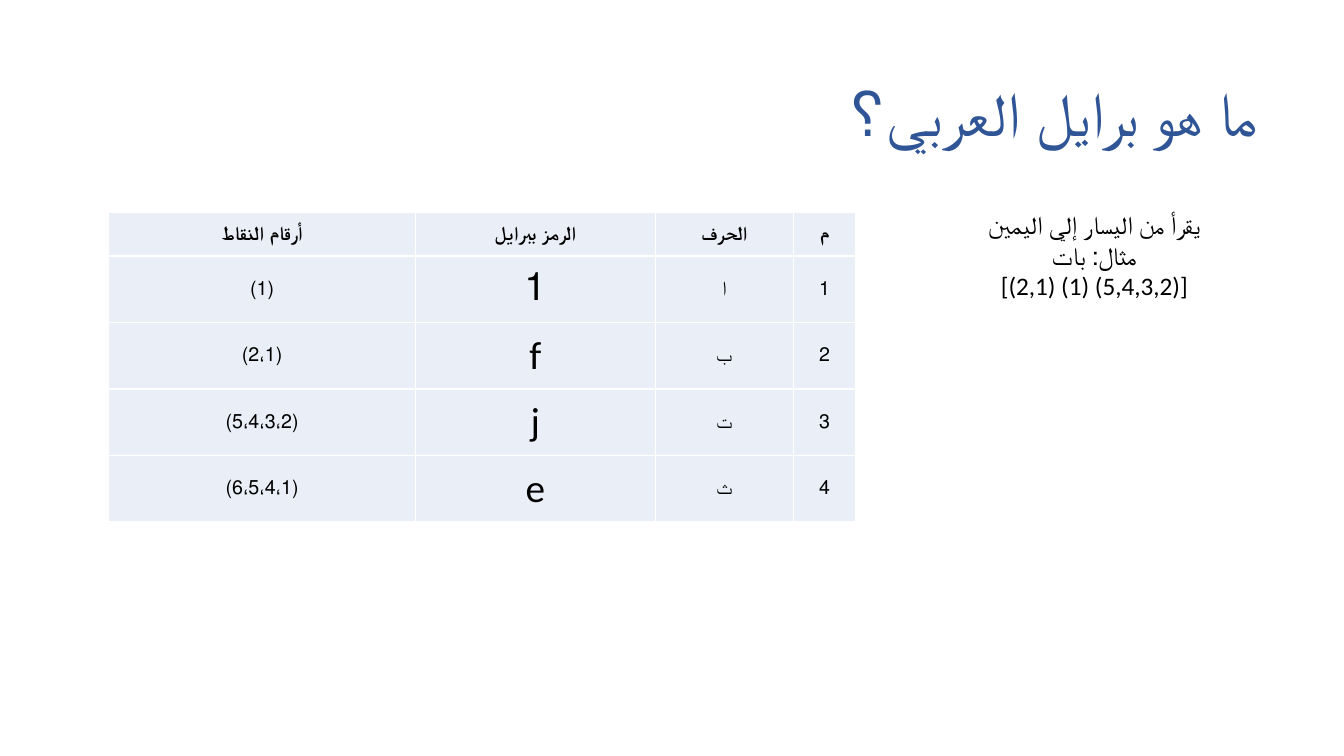
from lxml import etree
from pptx import Presentation
from pptx.dml.color import RGBColor
from pptx.enum import text
from pptx.oxml import ns
from pptx.util import Inches, Pt

FONT = "Calibri"
BLACK, BLUE, PALE, WHITE = "000000", "2F5597", "EAEFF7", "FFFFFF"

# Columns run from left to right as they show on the slide.
COLUMN_WIDTHS = [3.04, 2.38, 1.37, 0.62]
ROW_HEIGHTS = [0.43] + [0.66] * 4
BRAILLE_COLUMN = 1
BRAILLE_ROWS = [
    ["أرقام النقاط", "الرمز ببرايل", "الحرف", "م"],
    ["(1)", "1", "ا", "1"],
    ["(2،1)", "f", "ب", "2"],
    ["(5،4،3،2)", "j", "ت", "3"],
    ["(6،5،4،1)", "e", "ث", "4"],
]
EXAMPLE_LINES = [
    "يقرأ من اليسار إلي اليمين",
    "مثال: بات",
    "[(2,1) (1) (5,4,3,2)]",
]


def rgb(color):
    return RGBColor.from_string(color)


def format_paragraph(p, size, color, align, bold=False, rtl=False):
    p.alignment = align
    p.font.name = FONT
    p.font.size = Pt(size)
    p.font.bold = bold
    p.font.color.rgb = rgb(color)
    if rtl:
        p._p.get_or_add_pPr().set("rtl", "1")


def add_title(slide, title):
    sp = slide.shapes.title
    sp.left, sp.top = Inches(1.08), Inches(0.43)
    sp.width, sp.height = Inches(11.5), Inches(1.45)
    tf = sp.text_frame
    tf.text = title
    tf.vertical_anchor = text.MSO_ANCHOR.MIDDLE
    p = tf.paragraphs[0]
    p.line_spacing = 0.9
    format_paragraph(p, 44, BLUE, text.PP_ALIGN.RIGHT, rtl=True)


def add_borders(cell, color, width):
    tc_pr = cell._tc.get_or_add_tcPr()
    for side in "LRTB":
        ln = etree.SubElement(tc_pr, ns.qn("a:ln" + side), w=str(Pt(width)))
        fill = etree.SubElement(ln, ns.qn("a:solidFill"))
        etree.SubElement(fill, ns.qn("a:srgbClr"), val=color)


def fill_cell(cell, content, size, bold):
    cell.text = content
    cell.vertical_anchor = text.MSO_ANCHOR.MIDDLE
    cell.margin_left = cell.margin_right = Inches(0.07)
    cell.margin_top = cell.margin_bottom = 0
    add_borders(cell, WHITE, 1)
    cell.fill.solid()
    cell.fill.fore_color.rgb = rgb(PALE)
    format_paragraph(cell.text_frame.paragraphs[0], size, BLACK,
                     text.PP_ALIGN.CENTER, bold=bold, rtl=True)


def add_braille_table(slide):
    table = slide.shapes.add_table(
        len(ROW_HEIGHTS), len(COLUMN_WIDTHS), Inches(1.08), Inches(2.11),
        Inches(sum(COLUMN_WIDTHS)), Inches(sum(ROW_HEIGHTS))).table
    table.horz_banding = False
    for column, width in zip(table.columns, COLUMN_WIDTHS):
        column.width = Inches(width)
    for i, (row, height) in enumerate(zip(table.rows, ROW_HEIGHTS)):
        row.height = Inches(height)
        for j, cell in enumerate(row.cells):
            is_symbol = i > 0 and j == BRAILLE_COLUMN
            fill_cell(cell, BRAILLE_ROWS[i][j], 28 if is_symbol else 14,
                      bold=i == 0)


def add_example(slide):
    sp = slide.shapes.add_textbox(
        Inches(8.77), Inches(1.41), Inches(4.17), Inches(2.24))
    tf = sp.text_frame
    tf.word_wrap = True
    tf.vertical_anchor = text.MSO_ANCHOR.MIDDLE
    tf.text = "\n".join(EXAMPLE_LINES)
    for p in tf.paragraphs:
        format_paragraph(p, 18, BLACK, text.PP_ALIGN.CENTER)


def main():
    prs = Presentation()
    prs.slide_width, prs.slide_height = Inches(13.33), Inches(7.5)
    slide = prs.slides.add_slide(prs.slide_layouts.get_by_name("Title Only"))
    add_title(slide, "ما هو برايل العربي؟")
    add_braille_table(slide)
    add_example(slide)
    prs.save("out.pptx")


if __name__ == "__main__":
    main()
